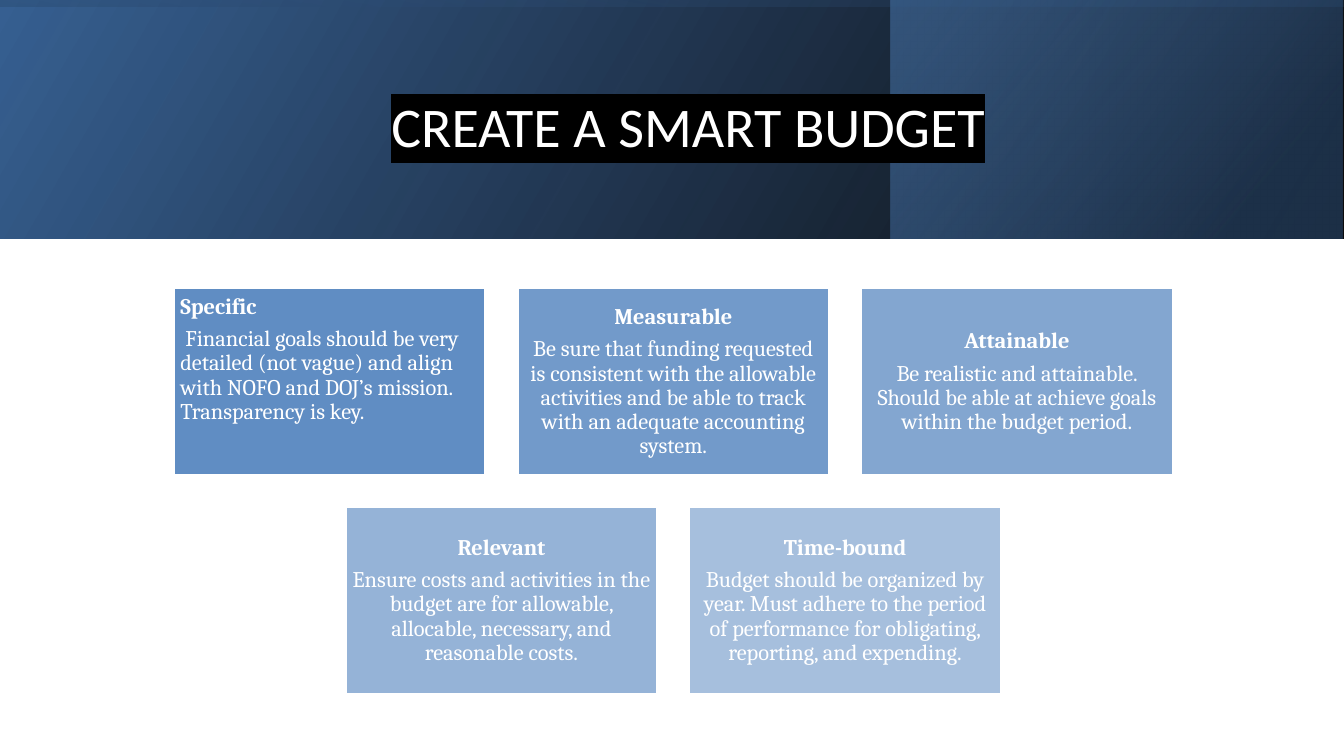
from dataclasses import dataclass

from lxml.etree import SubElement
from pptx import Presentation
from pptx.dml.color import RGBColor
from pptx.enum.shapes import MSO_SHAPE as Preset
from pptx.enum.text import MSO_ANCHOR as Anchor, PP_ALIGN as Align
from pptx.oxml.ns import qn
from pptx.util import Cm, Pt

COLORS = {
    "white": "FFFFFF",
    "black": "000000",
    "navy": "254061",
    "deep_blue": "376092",
    "blue": "4F81BD",
}
SLIDE_WIDTH, SLIDE_HEIGHT = 33.87, 19.05
BANNER_HEIGHT = 6.02
CARD_WIDTH, CARD_HEIGHT, CARD_GAP = 7.87, 4.72, 0.79
CARDS_TOP, CARDS_CENTER = 7.26, 16.97


@dataclass
class Stop:
    position: int
    color: str
    alpha: int = 100


@dataclass
class BannerLayer:
    left: float
    top: float
    width: float
    height: float
    stops: list[Stop]
    angle: int
    rotation: int = 0


@dataclass
class Card:
    heading: str
    body: str
    alpha: int
    align: Align = Align.CENTER
    anchor: Anchor = Anchor.MIDDLE
    body_indent: float = 0


BANNER = [
    BannerLayer(0, 0, SLIDE_WIDTH, BANNER_HEIGHT,
                [Stop(0, "black", 96), Stop(100, "deep_blue")], 330),
    BannerLayer(22.45, 0, 11.38, BANNER_HEIGHT,
                [Stop(19, "navy", 68), Stop(100, "blue", 48)], 320),
    BannerLayer((SLIDE_WIDTH - BANNER_HEIGHT) / 2, (BANNER_HEIGHT - SLIDE_WIDTH) / 2,
                BANNER_HEIGHT, SLIDE_WIDTH,
                [Stop(23, "deep_blue", 16), Stop(99, "black", 45)], 350, 270),
]
CARD_ROWS = [
    [
        Card("Specific",
             "Financial goals should be very detailed (not vague) and align with "
             "NOFO and DOJ’s mission. Transparency is key.",
             90, Align.LEFT, Anchor.TOP, 0.13),
        Card("Measurable",
             "Be sure that funding requested is consistent with the allowable activities "
             "and be able to track with an adequate accounting system.", 80),
        Card("Attainable",
             "Be realistic and attainable. Should be able at achieve goals within "
             "the budget period.", 70),
    ],
    [
        Card("Relevant",
             "Ensure costs and activities in the budget are for allowable, allocable, "
             "necessary, and reasonable costs.", 60),
        Card("Time-bound",
             "Budget should be organized by year. Must adhere to the period of "
             "performance for obligating, reporting, and expending.", 50),
    ],
]


def rgb(name: str) -> RGBColor:
    return RGBColor.from_string(COLORS[name])


def add_alpha(color_element, percent: int) -> None:
    SubElement(color_element, qn("a:alpha"), val=str(percent * 1000))


def add_rectangle(page, left: float, top: float, width: float, height: float):
    box = page.shapes.add_shape(Preset.RECTANGLE, Cm(left), Cm(top), Cm(width), Cm(height))
    box.shadow.inherit = False
    return box


def add_span(para, text: str, *, font: str, size: int, bold: bool = False):
    span = para.add_run()
    span.text = text
    span.font.name = font
    span.font.size = Pt(size)
    span.font.bold = bold
    span.font.color.rgb = rgb("white")
    return span


def add_banner_layer(page, layer: BannerLayer) -> None:
    """Draw a mirrored rectangle with a translucent linear gradient."""
    box = add_rectangle(page, layer.left, layer.top, layer.width, layer.height)
    box.rotation = layer.rotation
    box.line.fill.background()
    box.fill.gradient()
    properties = box.element.spPr
    properties.find(qn("a:xfrm")).set("flipH", "1")
    gradient = properties.find(qn("a:gradFill"))
    stop_list = gradient.find(qn("a:gsLst"))
    for old_stop in list(stop_list):
        stop_list.remove(old_stop)
    for stop in layer.stops:
        element = SubElement(stop_list, qn("a:gs"), pos=str(stop.position * 1000))
        color = SubElement(element, qn("a:srgbClr"), val=COLORS[stop.color])
        add_alpha(color, stop.alpha)
    gradient.find(qn("a:lin")).set("ang", str(layer.angle * 60000))


def add_title(page, text: str) -> None:
    box = page.shapes.add_textbox(Cm(3.84), Cm(0.97), Cm(27), Cm(4.37))
    frame = box.text_frame
    frame.word_wrap = True
    frame.vertical_anchor = Anchor.MIDDLE
    para = frame.paragraphs[0]
    para.alignment = Align.CENTER
    span = add_span(para, text, font="Calibri", size=40)
    properties = span.font._element if hasattr(span.font, "_element") else span._r.rPr
    highlight = SubElement(properties, qn("a:highlight"))
    SubElement(highlight, qn("a:srgbClr"), val=COLORS["black"])
    properties.find(qn("a:solidFill")).addnext(highlight)


def add_card(page, card: Card, left: float, top: float) -> None:
    box = add_rectangle(page, left, top, CARD_WIDTH, CARD_HEIGHT)
    box.fill.solid()
    box.fill.fore_color.rgb = rgb("blue")
    add_alpha(box.element.spPr.find(qn("a:solidFill"))[0], card.alpha)
    box.line.color.rgb = rgb("white")
    box.line.width = Pt(2)

    frame = box.text_frame
    frame.word_wrap = True
    frame.vertical_anchor = card.anchor
    frame.margin_left = frame.margin_right = Cm(0.17)
    frame.margin_top = frame.margin_bottom = Cm(0.17)
    heading, body = frame.paragraphs[0], frame.add_paragraph()
    for para, text in ((heading, card.heading), (body, card.body)):
        para.alignment = card.align
        para.line_spacing = 0.9
        para.space_after = Pt(6)
        add_span(para, text, font="Cambria", size=16, bold=para is heading)
    if card.body_indent:
        body._p.get_or_add_pPr().set("indent", str(Cm(card.body_indent)))


def main() -> None:
    deck = Presentation()
    deck.slide_width, deck.slide_height = Cm(SLIDE_WIDTH), Cm(SLIDE_HEIGHT)
    page = deck.slides.add_slide(deck.slide_layouts[6])
    for layer in BANNER:
        add_banner_layer(page, layer)
    add_title(page, "CREATE A SMART BUDGET")
    for row, cards in enumerate(CARD_ROWS):
        row_width = len(cards) * (CARD_WIDTH + CARD_GAP) - CARD_GAP
        row_left = CARDS_CENTER - row_width / 2
        top = CARDS_TOP + row * (CARD_HEIGHT + CARD_GAP)
        for column, card in enumerate(cards):
            add_card(page, card, row_left + column * (CARD_WIDTH + CARD_GAP), top)
    deck.save("out.pptx")


if __name__ == "__main__":
    main()
